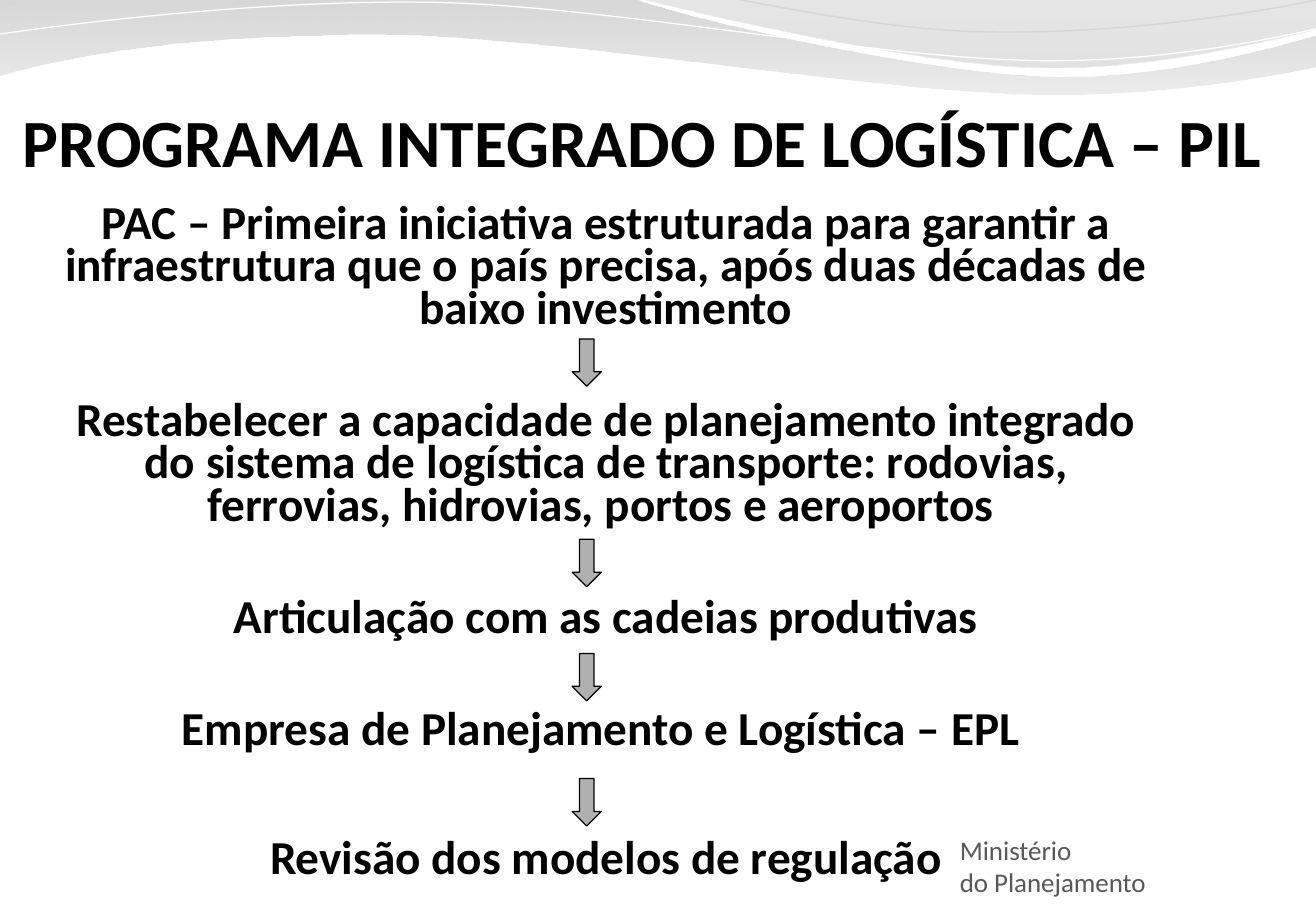
from lxml.etree import SubElement
from pptx import Presentation
from pptx.dml.color import RGBColor
from pptx.enum.shapes import MSO_SHAPE as Shape
from pptx.enum.text import MSO_AUTO_SIZE as AutoSize, PP_ALIGN as Align
from pptx.oxml.ns import qn
from pptx.util import Inches, Pt

CELL = Inches(1)
COLUMNS, ROWS = 10.83, 7.5
FONT = "Calibri"
BLACK = RGBColor(0x00, 0x00, 0x00)
WHITE = RGBColor(0xFF, 0xFF, 0xFF)
ARROW_GRAY = RGBColor(0xB0, 0xB0, 0xB0)
SIGNATURE_GRAY = RGBColor(0x59, 0x59, 0x59)
LINE_GRAY = RGBColor(0xD6, 0xD6, 0xD6)
WAVE_DARK = RGBColor(0xA3, 0xA3, 0xA3)
WAVE_LIGHT = RGBColor(0xDD, 0xDD, 0xDD)
CREST_DARK = RGBColor(0xB4, 0xB4, 0xB4)
CREST_LIGHT = RGBColor(0xC3, 0xC3, 0xC3)

WAVE = [(-0.39, -0.11), (4.94, -0.11),
        (5.36, 0.09, 7.63, 0.63, 8.78, 0.63), (9.93, 0.63, 11.2, 0.19, 11.7, 0),
        (11.71, 0.1, 11.71, 0.21, 11.71, 0.32),
        (11.5, 0.41, 10.13, 0.78, 8.63, 0.78), (7.13, 0.77, 4.23, 0.22, 2.72, 0.29),
        (1.17, 0.31, 0.2, 0.53, -0.4, 0.75), (-0.4, 0.3, -0.39, 0.33, -0.39, -0.11)]
CREST = [(4.88, -0.12), (5.25, 0, 7.42, 0.52, 8.51, 0.55),
         (9.6, 0.59, 10.93, 0.21, 11.41, 0.1), (11.41, -0.11), (4.88, -0.12)]
GRAY_LINE = [(-0.05, 0.09), (0.5, -0.14, 1.86, -0.48, 3.21, -0.45),
             (4.55, -0.42, 6.62, 0.22, 8.02, 0.26), (9.43, 0.3, 10.95, 0.02, 11.63, -0.2)]
WHITE_LINE = [(-0.25, 0.32), (0.28, 0.23, 2.09, -0.01, 3.58, 0.02),
              (5.08, 0.05, 7.31, 0.51, 8.7, 0.5), (10.09, 0.49, 11.26, 0.13, 11.93, -0.04)]

STEPS = [
    ("PAC – Primeira iniciativa estruturada para garantir a infraestrutura que o país "
     "precisa, após duas décadas de baixo investimento", 0),
    ("Restabelecer a capacidade de planejamento integrado do sistema de logística de "
     "transporte: rodovias, ferrovias, hidrovias, portos e aeroportos ", 41.2),
    ("Articulação com as cadeias produtivas", 41.2),
    ("Empresa de Planejamento e Logística – EPL ", 41.2),
    ("Revisão dos modelos de regulação", 51.2),
]
ARROW_TOPS = [1.15, 2.8, 3.74, 4.77]


def cells(*values):
    """Turn grid cells into slide lengths."""
    return [round(value * CELL) for value in values]


def add_outline(slide, box, outline, closed):
    """Draw an outline of straight and cubic segments from the corner of the box."""
    points = [cells(box[0] + x, box[1] + y)
              for segment in outline for x, y in zip(segment[::2], segment[1::2])]
    builder = slide.shapes.build_freeform(*points[0])
    builder.add_line_segments(points[1:], close=closed)
    shape = builder.convert_to_shape()
    shape.shadow.inherit = False
    lines = iter(list(shape._element.iter(qn("a:lnTo"))))
    for segment in outline[1:]:
        line = next(lines)
        if len(segment) == 6:
            line.tag = qn("a:cubicBezTo")
            for _ in range(2):
                extra = next(lines)
                line.append(extra[0])
                extra.getparent().remove(extra)
    return shape


def add_header(slide, box):
    """Draw the translucent waves and the thin lines over them."""
    waves = [(WAVE, [(0, WAVE_DARK, 45), (1, WAVE_LIGHT, 55)]),
             (CREST, [(0, CREST_DARK, 30), (0.8, CREST_LIGHT, 45)])]
    for outline, stops in waves:
        shape = add_outline(slide, box, outline, True)
        shape.line.fill.background()
        shape.fill.gradient()
        shape.fill.gradient_angle = 270
        for stop, (position, color, _) in zip(shape.fill.gradient_stops, stops):
            stop.position = position
            stop.color.rgb = color
        colors = shape._element.spPr.iter(qn("a:srgbClr"))
        for element, (_, _, opacity) in zip(colors, stops):
            SubElement(element, qn("a:alpha")).set("val", str(opacity * 1000))
    for outline, color, width in [(GRAY_LINE, LINE_GRAY, 0.85), (WHITE_LINE, WHITE, 0.75)]:
        shape = add_outline(slide, box, outline, False)
        shape.fill.background()
        shape.line.color.rgb = color
        shape.line.width = Pt(width)


def add_text(slide, box, lines, size, color, bold=False, align=Align.LEFT, spacing=1.0):
    """Write paragraphs, each with its space before, into a box."""
    text_box = slide.shapes.add_textbox(*cells(*box))
    frame = text_box.text_frame
    frame.word_wrap = True
    frame.auto_size = AutoSize.SHAPE_TO_FIT_TEXT
    for index, (text, gap) in enumerate(lines):
        paragraph = frame.add_paragraph() if index else frame.paragraphs[0]
        paragraph.alignment = align
        paragraph.line_spacing = spacing
        paragraph.space_before = Pt(gap)
        run = paragraph.add_run()
        run.text = text
        run.font.name = FONT
        run.font.size = Pt(size)
        run.font.bold = bold
        run.font.color.rgb = color


def add_flow(slide, box):
    """Write the steps of the programme with an arrow between each pair."""
    left, top, width, _ = box
    add_text(slide, box, STEPS, 28, BLACK, True, Align.CENTER, 0.75)
    for arrow_top in ARROW_TOPS:
        arrow = slide.shapes.add_shape(
            Shape.DOWN_ARROW, *cells(left + 0.47 * width, top + arrow_top, 0.24, 0.39))
        arrow.shadow.inherit = False
        arrow.fill.solid()
        arrow.fill.fore_color.rgb = ARROW_GRAY
        arrow.line.color.rgb = BLACK
        arrow.line.width = Pt(0.75)


def main():
    """Build and save the slide."""
    presentation = Presentation()
    presentation.slide_width, presentation.slide_height = cells(COLUMNS, ROWS)
    slide = presentation.slides.add_slide(presentation.slide_layouts[6])
    add_header(slide, (0, 0, COLUMNS, 0.8))
    add_text(slide, (7.8, 6.81, 1.95, 0.64),
             [("Ministério", 0), ("do Planejamento", 0)], 16, SIGNATURE_GRAY)
    add_text(slide, (0.09, 0.85, 10.69, 0.71),
             [("PROGRAMA INTEGRADO DE LOGÍSTICA – PIL", 0)], 40, BLACK, True, spacing=0.9)
    add_flow(slide, (0.38, 1.64, 9.21, 5.73))
    presentation.save("out.pptx")


if __name__ == "__main__":
    main()
